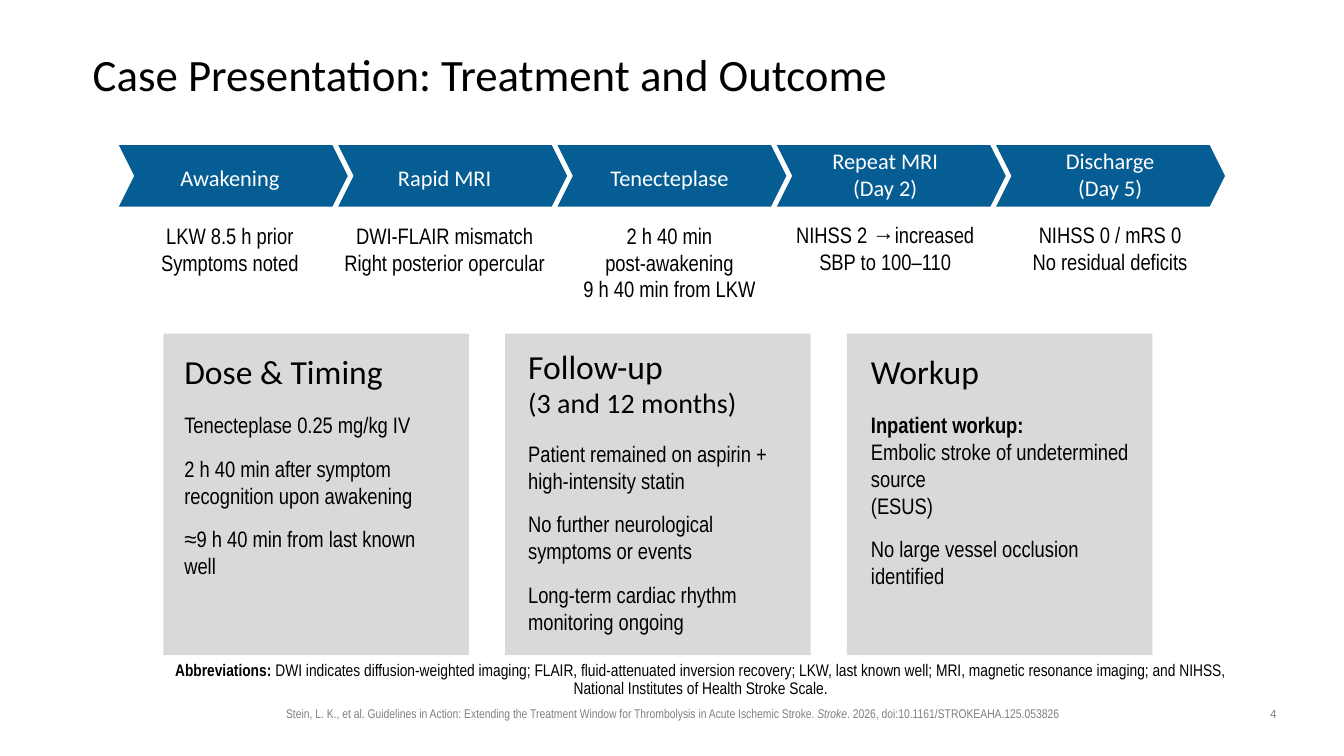
"""Build the slide on treatment and outcome of a stroke case."""
from pptx import Presentation
from pptx import util as u
from pptx.dml.color import RGBColor
from pptx.enum import shapes, text

BLUE = RGBColor(0x06, 0x5D, 0x93)
PANEL = RGBColor(0xD9, 0xD9, 0xD9)
GRAY = RGBColor(0x80, 0x80, 0x80)
BLACK = RGBColor(0, 0, 0)
WHITE = RGBColor(0xFF, 0xFF, 0xFF)
HEADING, BODY = "Calibri", "Arial Narrow"

deck = Presentation()
deck.slide_width, deck.slide_height = u.Inches(13.33), u.Inches(7.5)
page = deck.slides.add_slide(deck.slide_layouts[6])


def add_box(place, lines, align=text.PP_ALIGN.LEFT):
    """Add a text box from (wording, font name, size, colour) lines."""
    box = page.shapes.add_textbox(*[u.Inches(length) for length in place])
    frame = box.text_frame
    frame.word_wrap = True
    for index, (wording, name, size, color) in enumerate(lines):
        para = frame.paragraphs[0] if index == 0 else frame.add_paragraph()
        para.text = wording
        para.alignment = align
        for span in para.runs:
            span.font.name = name
            span.font.size = u.Pt(size)
            span.font.color.rgb = color
    return frame


def add_block(kind, place, color):
    """Add a plain filled shape without outline or shadow."""
    block = page.shapes.add_shape(kind, *[u.Inches(length) for length in place])
    block.shadow.inherit = False
    block.fill.solid()
    block.fill.fore_color.rgb = color
    block.line.fill.background()
    return block


title = add_box((0.92, 0.4, 11.5, 0.72),
                [("Case Presentation: Treatment and Outcome", HEADING, 32, BLACK)])
title.margin_left = title.margin_right = title.margin_top = title.margin_bottom = 0
title.vertical_anchor = text.MSO_ANCHOR.MIDDLE
title.paragraphs[0].line_spacing = 0.9

steps = [
    (1.21, 1.58, 2.14, 22, "Awakening", ["LKW 8.5 h prior", "Symptoms noted"]),
    (3.27, 1.58, 2.28, 22, "Rapid MRI",
     ["DWI-FLAIR mismatch", "Right posterior opercular"]),
    (5.39, 1.58, 2.5, 22, "Tenecteplase",
     ["2 h 40 min\vpost-awakening", "9 h 40 min from LKW"]),
    (7.71, 1.41, 2.14, 14.5, "Repeat MRI\v(Day 2)",
     ["NIHSS 2 →increased", "SBP to 100–110"]),
    (9.94, 1.41, 2.14, 14.5, "Discharge\v(Day 5)",
     ["NIHSS 0 / mRS 0", "No residual deficits"]),
]
for index in range(len(steps)):
    chevron = add_block(shapes.MSO_SHAPE.CHEVRON,
                        (1.18 + 2.175 * index, 1.44, 2.27, 0.61), BLUE)
    chevron.adjustments[0] = 0.25
for left, top, width, gap, label, details in steps:
    lines = [(label, HEADING, 16, WHITE)]
    lines += [(detail, BODY, 16, BLACK) for detail in details]
    frame = add_box((left, top, width, 1.38), lines, text.PP_ALIGN.CENTER)
    frame.paragraphs[1].space_before = u.Pt(gap)

cards = [
    (1.73, 3.43, 2.74, "Dose & Timing",
     ["Tenecteplase 0.25 mg/kg IV",
      "2 h 40 min after symptom recognition upon awakening",
      "≈9 h 40 min from last known well"]),
    (5.14, 3.38, 2.67, "Follow-up\v(3 and 12 months)",
     ["Patient remained on aspirin + high-intensity statin",
      "No further neurological symptoms or events",
      "Long-term cardiac rhythm monitoring ongoing"]),
    (8.54, 3.43, 2.77, "Workup",
     ["Inpatient workup:\vEmbolic stroke of undetermined source\v(ESUS)",
      "No large vessel occlusion identified"]),
]
for index, (left, top, width, heading, points) in enumerate(cards):
    add_block(shapes.MSO_SHAPE.RECTANGLE,
              (1.62 + 3.39 * index, 3.31, 3.03, 3.19), PANEL)
    lines = [(heading, HEADING, 24, BLACK)]
    lines += [(point, BODY, 16, BLACK) for point in points]
    frame = add_box((left, top, width, 3.06), lines)
    frame.paragraphs[1].space_before = u.Pt(14.5)
    for para in frame.paragraphs[1:]:
        para.space_after = u.Pt(12)
    for subheading in frame.paragraphs[0].runs[1:]:
        subheading.font.size = u.Pt(20)
    for span in frame.paragraphs[1].runs:
        span.font.bold = span.text == "Inpatient workup:"

notes = [
    ((1.73, 6.55, 10.54, 0.43), 12, BLACK,
     [("Abbreviations: ", True, False),
      ("DWI indicates diffusion-weighted imaging; FLAIR, fluid-attenuated inversion "
       "recovery; LKW, last known well; MRI, magnetic resonance imaging; and NIHSS, "
       "National Institutes of Health Stroke Scale.", False, False)]),
    ((2.36, 6.95, 8.62, 0.25), 9, GRAY,
     [("Stein, L. K., et al. Guidelines in Action: Extending the Treatment Window "
       "for Thrombolysis in Acute Ischemic Stroke. ", False, False),
      ("Stroke", False, True),
      (". 2026, doi:10.1161/STROKEAHA.125.053826", False, False)]),
]
note_frames = []
for place, size, color, parts in notes:
    frame = add_box(place, [("", BODY, size, color)], text.PP_ALIGN.CENTER)
    for wording, bold, italic in parts:
        span = frame.paragraphs[0].add_run()
        span.text = wording
        span.font.name = BODY
        span.font.size = u.Pt(size)
        span.font.color.rgb = color
        span.font.bold = bold
        span.font.italic = italic
    note_frames.append(frame)
abbreviations = note_frames[0]
abbreviations.margin_left = 0
abbreviations.vertical_anchor = text.MSO_ANCHOR.BOTTOM
abbreviations.paragraphs[0].line_spacing = 0.9

add_box((12.42, 6.95, 0.42, 0.26), [("4", HEADING, 9, GRAY)], text.PP_ALIGN.CENTER)

deck.save("out.pptx")
